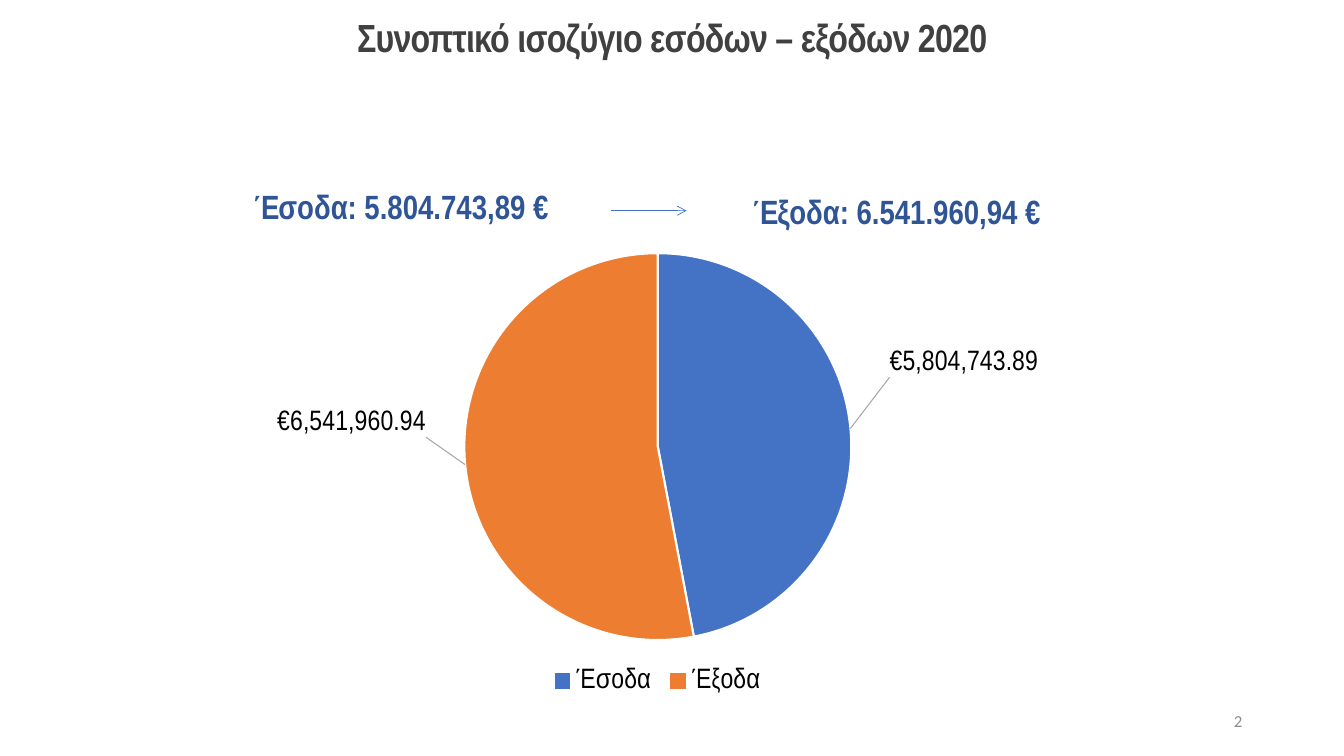
from dataclasses import dataclass

from lxml.etree import SubElement
from pptx import Presentation
from pptx.chart.data import CategoryChartData
from pptx.dml.color import RGBColor
from pptx.enum.chart import XL_CHART_TYPE, XL_LABEL_POSITION, XL_LEGEND_POSITION
from pptx.enum.shapes import MSO_CONNECTOR
from pptx.enum.text import MSO_ANCHOR, PP_ALIGN
from pptx.oxml import parse_xml
from pptx.oxml.ns import nsdecls, qn
from pptx.util import Inches, Pt


@dataclass(frozen=True)
class Theme:
    font: str = "Arial Narrow"
    number_font: str = "Calibri"
    title: str = "404040"
    heading: str = "2F5597"
    blue: str = "4472C4"
    orange: str = "ED7D31"
    black: str = "000000"
    white: str = "FFFFFF"
    grey: str = "8C8C8C"
    leader: str = "A6A6A6"
    title_pt: int = 28
    heading_pt: int = 24
    chart_pt: int = 20
    number_pt: int = 12


T = Theme()
WIDTH, HEIGHT = 13.33, 7.5
TITLE = "Συνοπτικό ισοζύγιο εσόδων – εξόδων 2020"
INCOME = "Έσοδα: 5.804.743,89 €"
EXPENSES = "Έξοδα: 6.541.960,94 €"
PAGE = "2"
EURO_FORMAT = '"€"#,##0.00'
# category, value, colour, label shift as shares of the chart
SLICES = [
    ("Έσοδα", 5804743.89, T.blue, (0.035, -0.11)),
    ("Έξοδα", 6541960.94, T.orange, (-0.035, -0.12)),
]
HEADING_TOP = 1.84
CHART_BOX = (1.8, 2.37, 9.44, 4.58)
PIE_DIAMETER, PIE_TOP = 3.84, 0.14


def rgb(code):
    return RGBColor.from_string(code)


def style(font, size, color, bold=False, name=T.font):
    font.name, font.size, font.bold = name, Pt(size), bold
    font.color.rgb = rgb(color)


def add_text(slide, box, text, size, color, align, bold=True, name=T.font,
             anchor=MSO_ANCHOR.TOP):
    tf = slide.shapes.add_textbox(*map(Inches, box)).text_frame
    tf.word_wrap = True
    tf.vertical_anchor = anchor
    p = tf.paragraphs[0]
    p.text = text
    p.alignment = align
    style(p.runs[0].font, size, color, bold, name)
    return p


def add_arrow(slide, x1, x2, y):
    line = slide.shapes.add_connector(
        MSO_CONNECTOR.STRAIGHT, *map(Inches, (x1, y, x2, y)))
    line.line.color.rgb = rgb(T.blue)
    line.line.width = Pt(0.5)
    SubElement(line.line._get_or_add_ln(), qn("a:tailEnd"), type="arrow")
    SubElement(line._element.spPr, qn("a:effectLst"))


def manual_layout(**values):
    """Chart layout element whose children are given in schema order."""
    items = "".join(f'<c:{k} val="{v}"/>' for k, v in values.items())
    return parse_xml(f'<c:layout {nsdecls("c")}><c:manualLayout>{items}'
                     '</c:manualLayout></c:layout>')


def place_pie(chart):
    _, _, w, h = CHART_BOX
    share_w, share_h = PIE_DIAMETER / w, PIE_DIAMETER / h
    area = chart._chartSpace.chart.plotArea
    for old in area.findall(qn("c:layout")):
        area.remove(old)
    area.insert(0, manual_layout(
        layoutTarget="inner", xMode="edge", yMode="edge",
        x=round((1 - share_w) / 2, 3), y=round(PIE_TOP / h, 3),
        w=round(share_w, 3), h=round(share_h, 3)))


def label_slice(point, shift):
    label = point.data_label
    style(label.font, T.chart_pt, T.black)
    label.position = XL_LABEL_POSITION.OUTSIDE_END
    idx = label._dLbl.find(qn("c:idx"))
    number = parse_xml(f'<c:numFmt {nsdecls("c")} sourceLinked="0"/>')
    number.set("formatCode", EURO_FORMAT)
    idx.addnext(number)
    idx.addnext(manual_layout(x=shift[0], y=shift[1]))


def add_leader_lines(labels):
    element = labels._element
    for tag in ("c:showLeaderLines", "c:leaderLines"):
        for old in element.findall(qn(tag)):
            element.remove(old)
    SubElement(element, qn("c:showLeaderLines"), val="1")
    element.append(parse_xml(
        f'<c:leaderLines {nsdecls("c", "a")}><c:spPr><a:ln w="9525"><a:solidFill>'
        f'<a:srgbClr val="{T.leader}"/></a:solidFill></a:ln></c:spPr></c:leaderLines>'))


def add_pie(slide):
    data = CategoryChartData(number_format=EURO_FORMAT)
    data.categories = [s[0] for s in SLICES]
    data.add_series("Series 1", [s[1] for s in SLICES])
    chart = slide.shapes.add_chart(
        XL_CHART_TYPE.PIE, *map(Inches, CHART_BOX), data).chart
    style(chart.font, T.chart_pt, T.black)
    chart.has_title = False
    chart.has_legend = True
    chart.legend.position = XL_LEGEND_POSITION.BOTTOM
    chart.legend.include_in_layout = False
    style(chart.legend.font, T.chart_pt, T.black)
    place_pie(chart)

    plot = chart.plots[0]
    plot.vary_by_categories = True
    series = plot.series[0]
    labels = series.data_labels
    labels.show_value = True
    labels.number_format = EURO_FORMAT
    labels.number_format_is_linked = False
    labels.position = XL_LABEL_POSITION.OUTSIDE_END
    style(labels.font, T.chart_pt, T.black)
    for i, (_, _, color, shift) in enumerate(SLICES):
        point = series.points[i]
        point.format.fill.solid()
        point.format.fill.fore_color.rgb = rgb(color)
        point.format.line.color.rgb = rgb(T.white)
        point.format.line.width = Pt(1.5)
        label_slice(point, shift)
    add_leader_lines(labels)


def main():
    prs = Presentation()
    prs.slide_width, prs.slide_height = Inches(WIDTH), Inches(HEIGHT)
    slide = prs.slides.add_slide(prs.slide_layouts[6])

    p = add_text(slide, (2.43, HEADING_TOP, 3.74, 5.08), INCOME,
                 T.heading_pt, T.heading, PP_ALIGN.JUSTIFY)
    p.line_spacing, p.space_before = 0.9, Pt(12)
    indent = Inches(0.1)
    p._p.get_or_add_pPr().set("marL", str(indent))
    p._p.get_or_add_pPr().set("indent", str(-indent))

    p = add_text(slide, (0, 0, WIDTH, 0.65), TITLE, T.title_pt, T.title,
                 PP_ALIGN.CENTER, anchor=MSO_ANCHOR.BOTTOM)
    p.line_spacing, p.space_before = 0.85, Pt(24)
    p.runs[0]._r.get_or_add_rPr().set("spc", "-50")

    add_arrow(slide, 6.06, 6.81, 2.09)
    add_text(slide, (7.38, HEADING_TOP, 5.26, 0.5), EXPENSES,
             T.heading_pt, T.heading, PP_ALIGN.JUSTIFY)
    add_pie(slide)
    add_text(slide, (9.42, 6.95, 3, 0.4), PAGE, T.number_pt, T.grey,
             PP_ALIGN.RIGHT, False, T.number_font, MSO_ANCHOR.MIDDLE)
    prs.save("out.pptx")


if __name__ == "__main__":
    main()
